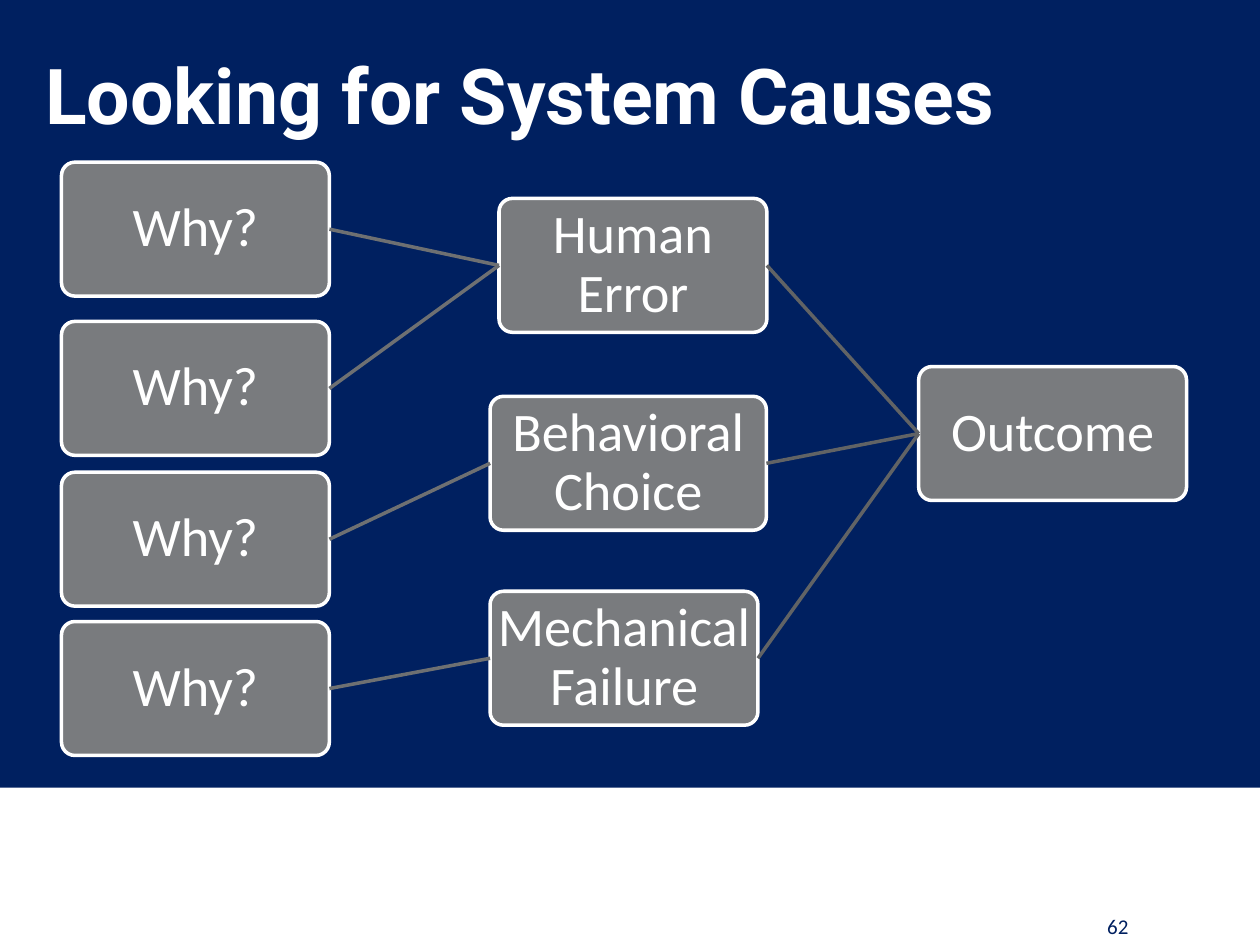
from lxml import etree
from pptx import Presentation
from pptx.dml.color import RGBColor
from pptx.enum.shapes import MSO_CONNECTOR, MSO_SHAPE
from pptx.enum.text import MSO_ANCHOR, PP_ALIGN
from pptx.oxml.ns import qn
from pptx.util import Cm, Pt

RECT, ROUND = MSO_SHAPE.RECTANGLE, MSO_SHAPE.ROUNDED_RECTANGLE
STRAIGHT = MSO_CONNECTOR.STRAIGHT
MIDDLE = MSO_ANCHOR.MIDDLE
LEFT, CENTER = PP_ALIGN.LEFT, PP_ALIGN.CENTER
LEFT_SITE, RIGHT_SITE = 1, 3

# Content: each node is (text, left, top, width, causes), lengths in cm
TITLE = "Looking for System Causes"
NUMBER = "62"
WIDE, HIGH, INSET = 5.4, 2.7, 0.02


def why(top):
    return ("Why?", 1.24, top, WIDE, [])


TREE = ("Outcome", 18.52, 7.39, WIDE, [
    ("Human Error", 10.06, 4.0, WIDE, [why(3.27), why(6.48)]),
    ("Behavioral Choice", 9.88, 7.99, 5.57, [why(9.52)]),
    ("Mechanical Failure", 9.88, 11.92, WIDE, [why(12.53)]),
])

THEME = {
    "navy": "002060", "white": "FFFFFF", "box": "797B7E",
    "links": ["616365", "6E7072"],  # by depth in the tree
    "head": "Roboto", "body": "Calibri",
    "title": 44, "node": 31, "number": 12, "line": 2,
}


def color(code):
    return RGBColor.from_string(code)


def write(frame, text, font, size, ink, align, bold=False):
    frame.word_wrap = True
    frame.vertical_anchor = MIDDLE
    para = frame.paragraphs[0]
    para.alignment = align
    run = para.add_run()
    run.text = text
    run.font.name, run.font.size, run.font.bold = font, Pt(size), bold
    run.font.color.rgb = color(ink)
    return para


def add_box(shapes, text, left, top, width):
    box = shapes.add_shape(ROUND, Cm(left), Cm(top), Cm(width), Cm(HIGH))
    box.shadow.inherit = False
    box.adjustments[0] = 0.1
    box.fill.solid()
    box.fill.fore_color.rgb = color(THEME["box"])
    box.line.color.rgb = color(THEME["white"])
    box.line.width = Pt(THEME["line"])
    frame = box.text_frame
    frame.margin_left = frame.margin_right = Cm(INSET)
    frame.margin_top = frame.margin_bottom = Cm(INSET)
    para = write(frame, text, THEME["body"], THEME["node"], THEME["white"], CENTER)
    para.line_spacing = 0.9
    return box


def add_link(shapes, parent, child, ink):
    link = shapes.add_connector(STRAIGHT, 0, 0, 0, 0)
    link.begin_connect(parent, LEFT_SITE)
    link.end_connect(child, RIGHT_SITE)
    link.line.color.rgb = color(ink)
    link.line.width = Pt(THEME["line"])
    etree.SubElement(link.element.spPr, qn("a:effectLst"))


def add_tree(shapes, node, depth=0):
    *place, causes = node
    box = add_box(shapes, *place)
    for cause in causes:
        child = add_tree(shapes, cause, depth + 1)
        add_link(shapes, box, child, THEME["links"][depth])
    return box


def main():
    deck = Presentation()
    deck.slide_width, deck.slide_height = Cm(25.4), Cm(19.05)
    shapes = deck.slides.add_slide(deck.slide_layouts[6]).shapes

    # Navy panel
    panel = shapes.add_shape(RECT, 0, 0, deck.slide_width, Cm(15.88))
    panel.shadow.inherit = False
    panel.fill.solid()
    panel.fill.fore_color.rgb = color(THEME["navy"])
    panel.line.fill.background()

    # Title and slide number
    title = shapes.add_textbox(Cm(0.66), Cm(0.64), Cm(22.89), Cm(2.49))
    write(title.text_frame, TITLE, THEME["head"], THEME["title"],
          THEME["white"], LEFT, True)
    number = shapes.add_textbox(Cm(21.8), Cm(18.29), Cm(1.47), Cm(0.76))
    write(number.text_frame, NUMBER, THEME["body"], THEME["number"],
          THEME["navy"], CENTER)

    # Cause tree
    add_tree(shapes, TREE)
    deck.save("out.pptx")


if __name__ == "__main__":
    main()
